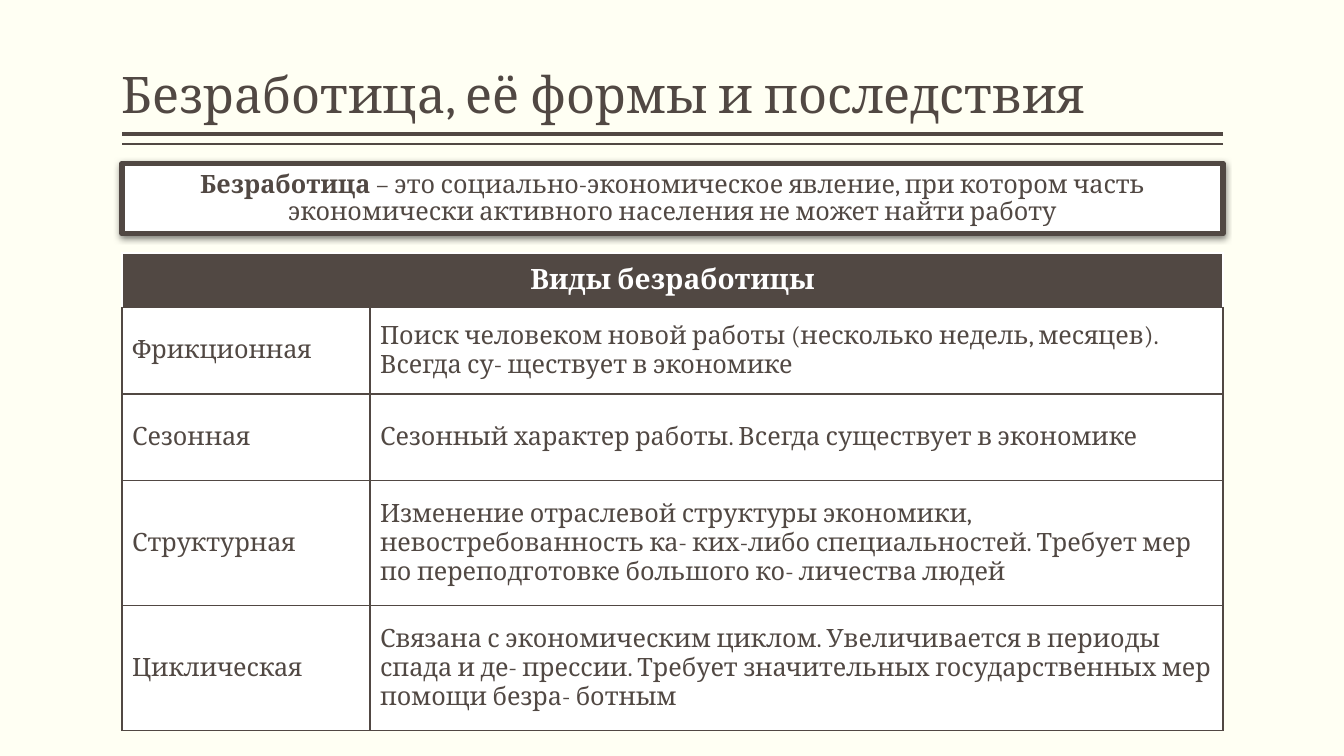
from dataclasses import dataclass

from lxml import etree
from pptx import Presentation
from pptx.dml.color import RGBColor
from pptx.enum import shapes, text
from pptx.oxml import ns
from pptx.util import Inches, Pt


@dataclass(frozen=True)
class Theme:
    background: str = "FFFFF3"
    dark: str = "514843"
    white: str = "FFFFFF"
    font: str = "Cambria"
    title_size: int = 36
    header_size: int = 20
    body_size: int = 18


THEME = Theme()
LEFT, WIDTH = 1.21, 10.92
COLUMN_WIDTHS = (2.46, 8.46)
ROW_HEIGHTS = (0.54, 0.86, 0.86, 1.24, 1.24)
TABLE_HEADER = "Виды безработицы"
UNEMPLOYMENT_TYPES = (
    ("Фрикционная", "Поиск человеком новой работы (несколько недель, месяцев). "
     "Всегда су- ществует в экономике"),
    ("Сезонная", "Сезонный характер работы. Всегда существует в экономике"),
    ("Структурная", "Изменение отраслевой структуры экономики, невостребованность "
     "ка- ких-либо специальностей. Требует мер по переподготовке большого "
     "ко- личества людей"),
    ("Циклическая", "Связана с экономическим циклом. Увеличивается в периоды спада "
     "и де- прессии. Требует значительных государственных мер помощи "
     "безра- ботным"),
)


def color(value):
    return RGBColor.from_string(value)


def add_element(parent, tag, **attributes):
    element = etree.SubElement(parent, ns.qn(tag))
    for name, value in attributes.items():
        element.set(name, str(value))
    return element


def add_shadow(effects, blur, distance, direction, opacity):
    """Put an outer shadow in an effect list; lengths are points, angle degrees."""
    shadow = add_element(effects, "a:outerShdw", blurRad=Pt(blur), dist=Pt(distance),
                         dir=direction * 60000, algn="tl", rotWithShape=0)
    black = add_element(shadow, "a:srgbClr", val="000000")
    add_element(black, "a:alpha", val=opacity * 1000)


def add_run(paragraph, content, size, ink=THEME.dark, bold=False, shadow=False):
    run = paragraph.add_run()
    run.text = content
    run.font.size = Pt(size)
    run.font.bold = bold
    run.font.color.rgb = color(ink)
    if shadow:
        add_shadow(add_element(run.font._element, "a:effectLst"), 3, 3, 45, 43)
    run.font.name = THEME.font


def set_frame(frame, anchor, horizontal, vertical):
    frame.word_wrap = True
    frame.vertical_anchor = anchor
    frame.margin_left = frame.margin_right = Inches(horizontal)
    frame.margin_top = frame.margin_bottom = Inches(vertical)


def add_title(slide, content):
    box = slide.shapes.add_textbox(Inches(LEFT), Inches(0.08), Inches(WIDTH), Inches(1.2))
    set_frame(box.text_frame, text.MSO_ANCHOR.BOTTOM, 0, 0.05)
    paragraph = box.text_frame.paragraphs[0]
    paragraph.line_spacing = 0.9
    add_run(paragraph, content, THEME.title_size, shadow=True)


def add_rule(slide, top, weight):
    rule = slide.shapes.add_connector(
        shapes.MSO_CONNECTOR.STRAIGHT, Inches(LEFT + WIDTH), Inches(top),
        Inches(LEFT), Inches(top))
    rule.line.color.rgb = color(THEME.dark)
    rule.line.width = Pt(weight)
    add_element(rule._element.spPr, "a:effectLst")


def add_definition(slide, term, definition):
    box = slide.shapes.add_shape(shapes.MSO_SHAPE.RECTANGLE, Inches(LEFT), Inches(1.62),
                                 Inches(WIDTH), Inches(0.7))
    box.fill.solid()
    box.fill.fore_color.rgb = color(THEME.white)
    box.line.color.rgb = color(THEME.dark)
    box.line.width = Pt(3.78)
    add_element(box.line._ln, "a:round")
    box.shadow.inherit = False
    add_shadow(box._element.spPr.find(ns.qn("a:effectLst")), 4.5, 1.5, 90, 50)
    set_frame(box.text_frame, text.MSO_ANCHOR.MIDDLE, 0.01, 0.01)
    paragraph = box.text_frame.paragraphs[0]
    paragraph.alignment = text.PP_ALIGN.CENTER
    paragraph.line_spacing = 0.9
    add_run(paragraph, term, THEME.body_size, bold=True)
    add_run(paragraph, definition, THEME.body_size)


def style_cell(cell, fill, side_ink, top_ink):
    properties = cell._tc.get_or_add_tcPr()
    inks = {"a:lnL": side_ink, "a:lnR": side_ink, "a:lnT": top_ink, "a:lnB": THEME.dark}
    for tag, ink in inks.items():
        border = add_element(properties, tag, w=Pt(1))
        add_element(add_element(border, "a:solidFill"), "a:srgbClr", val=ink)
    cell.fill.solid()
    cell.fill.fore_color.rgb = color(fill)
    cell.vertical_anchor = text.MSO_ANCHOR.MIDDLE


def add_types_table(slide):
    frame = slide.shapes.add_table(
        len(ROW_HEIGHTS), len(COLUMN_WIDTHS), Inches(LEFT), Inches(2.51),
        Inches(WIDTH), Inches(sum(ROW_HEIGHTS)))
    table = frame.table
    table.first_row = table.horz_banding = False
    for column, width in zip(table.columns, COLUMN_WIDTHS):
        column.width = Inches(width)
    for row, height in zip(table.rows, ROW_HEIGHTS):
        row.height = Inches(height)

    header = table.cell(0, 0)
    header.merge(table.cell(0, 1))
    for cell in table.rows[0].cells:
        style_cell(cell, THEME.dark, THEME.white, THEME.white)
    paragraph = header.text_frame.paragraphs[0]
    paragraph.alignment = text.PP_ALIGN.CENTER
    add_run(paragraph, TABLE_HEADER, THEME.header_size, THEME.white, bold=True)

    for row_index, row in enumerate(UNEMPLOYMENT_TYPES, start=1):
        for column_index, content in enumerate(row):
            cell = table.cell(row_index, column_index)
            style_cell(cell, THEME.white, THEME.dark, THEME.dark)
            add_run(cell.text_frame.paragraphs[0], content, THEME.body_size)


def main():
    presentation = Presentation()
    presentation.slide_width = Inches(13.33)
    presentation.slide_height = Inches(7.5)
    slide = presentation.slides.add_slide(presentation.slide_layouts[6])
    slide.background.fill.solid()
    slide.background.fill.fore_color.rgb = color(THEME.background)

    add_rule(slide, 1.33, 3)
    add_rule(slide, 1.43, 1)
    add_title(slide, "Безработица, её формы и последствия")
    add_definition(slide, "Безработица",
                   " – это социально-экономическое явление, при котором часть "
                   "экономически активного населения не может найти работу")
    add_types_table(slide)
    presentation.save("out.pptx")


if __name__ == "__main__":
    main()
